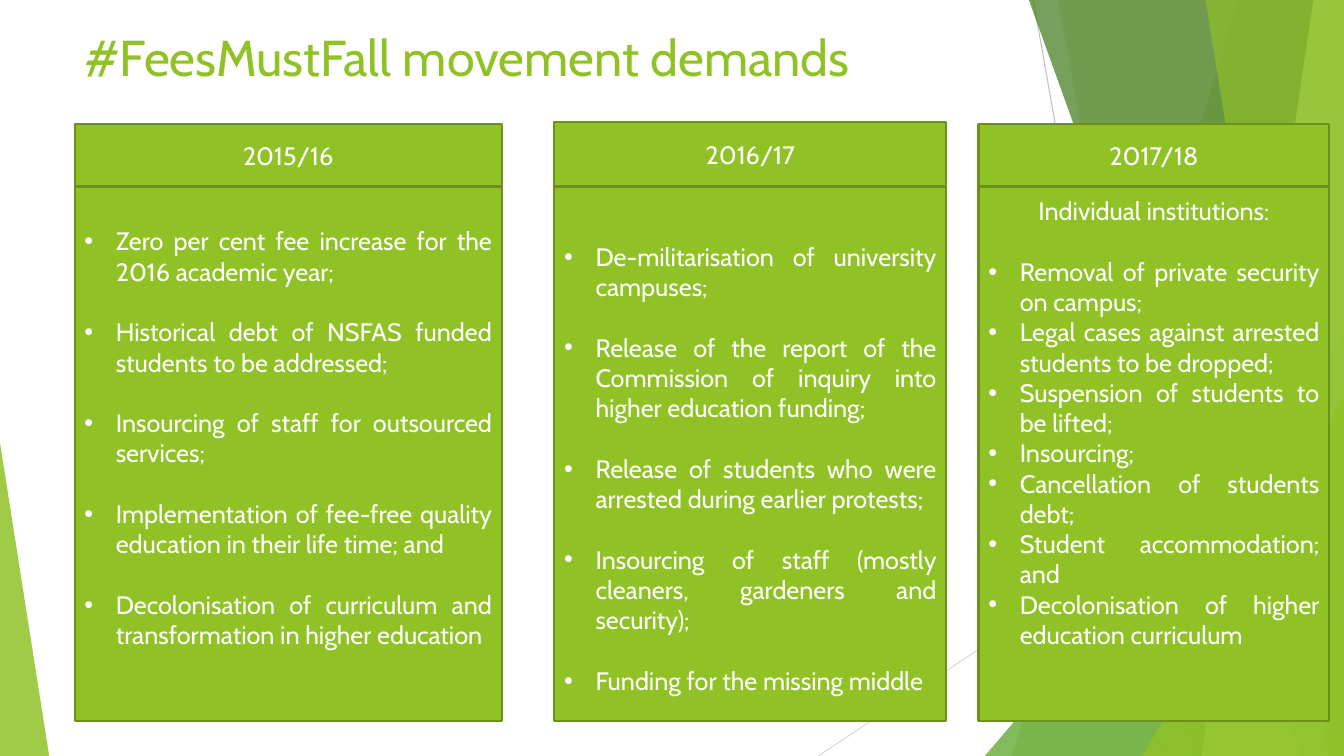
"""Build the slide that sets out the #FeesMustFall movement demands by year."""
from dataclasses import dataclass

from lxml.etree import SubElement
from pptx import Presentation
from pptx.dml.color import RGBColor
from pptx.enum.shapes import MSO_CONNECTOR, MSO_SHAPE
from pptx.enum.text import MSO_ANCHOR, PP_ALIGN
from pptx.oxml.ns import qn
from pptx.util import Cm, Pt

WIDTH, HEIGHT = 33.87, 19.05
BODY_TOP, BODY_HEIGHT = 4.7, 13.46
SIDE_INSET = 0.25
BULLET_INDENT = 0.79


@dataclass(frozen=True)
class Theme:
    font: str = "Cabin"
    bullet_font: str = "Arial"
    green: str = "90C226"
    border: str = "6B901C"
    leaf: str = "54A021"
    forest: str = "3F7819"
    lime: str = "C0E474"
    white: str = "FFFFFF"
    steep_line: str = "BFBFBF"
    shallow_line: str = "D9D9D9"
    title_size: float = 36
    body_size: float = 18
    blank_line: float = 21.7


THEME = Theme()


@dataclass(frozen=True)
class Ray:
    start: tuple[float, float]
    end: tuple[float, float]
    color: str


@dataclass(frozen=True)
class Shard:
    top_x: float
    foot_x: float
    color: str
    opacity: int


@dataclass(frozen=True)
class Wedge:
    left: float
    top: float
    width: float
    apex: float
    color: str
    opacity: int


@dataclass(frozen=True)
class Column:
    year: str
    left: float
    width: float
    header_top: float
    text_inset: float
    demands: tuple[str, ...]
    intro: str = ""
    spaced: bool = True


RAYS = (
    Ray((26.04, 0), (29.41, HEIGHT), THEME.steep_line),
    Ray((WIDTH, 10.24), (20.62, HEIGHT), THEME.shallow_line),
)

FACETS = (
    Shard(31.19, 25.5, THEME.green, 30),
    Shard(26.67, 30.05, THEME.green, 20),
    Wedge(24.82, 8.46, 9.05, 1, THEME.leaf, 72),
    Shard(25.93, 32.79, THEME.forest, 70),
    Shard(33.1, 30.28, THEME.lime, 70),
    Shard(30.38, 33.48, THEME.green, 65),
    Wedge(28.8, 9.98, 5.07, 1, THEME.green, 80),
    Wedge(0, 11.15, 1.24, 0, THEME.green, 85),
)

COLUMNS = (
    Column("2015/16", 1.88, 10.77, 3.12, 0.99, (
        "Zero per cent fee increase for the 2016 academic year;",
        "Historical debt of NSFAS funded students to be addressed;",
        "Insourcing of staff for outsourced services;",
        "Implementation of fee-free quality education in their life time; and",
        "Decolonisation of curriculum and transformation in higher education",
    )),
    Column("2016/17", 13.97, 9.88, 3.07, 1.38, (
        "De-militarisation of university campuses;",
        "Release of the report of the Commission of inquiry into higher education funding;",
        "Release of students who were arrested during earlier protests;",
        "Insourcing of staff (mostly cleaners, gardeners and security);",
        "Funding for the missing middle",
    )),
    Column("2017/18", 24.66, 8.84, 3.12, 0.23, (
        "Removal of private security on campus;",
        "Legal cases against arrested students to be dropped;",
        "Suspension of students to be lifted;",
        "Insourcing;",
        "Cancellation of students debt;",
        "Student accommodation; and",
        "Decolonisation of higher education curriculum",
    ), intro="Individual institutions:", spaced=False),
)


def draw_ray(page, ray: Ray) -> None:
    """Draw one thin background line."""
    line = page.shapes.add_connector(
        MSO_CONNECTOR.STRAIGHT, *(Cm(value) for value in ray.start + ray.end))
    line.line.color.rgb = RGBColor.from_string(ray.color)
    line.line.width = Pt(0.75)
    SubElement(line._element.spPr, qn("a:effectLst"))


def draw_facet(page, facet: Shard | Wedge) -> None:
    """Draw one translucent background facet."""
    if isinstance(facet, Shard):
        outline = page.shapes.build_freeform(Cm(facet.top_x), 0)
        corners = ((WIDTH, 0), (WIDTH, HEIGHT), (facet.foot_x, HEIGHT))
        outline.add_line_segments([(Cm(x), Cm(y)) for x, y in corners], close=True)
        shape = outline.convert_to_shape()
    else:
        shape = page.shapes.add_shape(
            MSO_SHAPE.ISOSCELES_TRIANGLE, Cm(facet.left), Cm(facet.top),
            Cm(facet.width), Cm(HEIGHT - facet.top))
        shape.adjustments[0] = facet.apex
    shape.shadow.inherit = False
    shape.line.fill.background()
    shape.fill.solid()
    shape.fill.fore_color.rgb = RGBColor.from_string(facet.color)
    color = next(shape._element.spPr.iter(qn("a:srgbClr")))
    SubElement(color, qn("a:alpha"), val=str(facet.opacity * 1000))


def style_para(para, size: float, color: str, align: PP_ALIGN) -> None:
    """Set alignment and font for a paragraph."""
    para.alignment = align
    for span in para.runs:
        span.font.name = THEME.font
        span.font.size = Pt(size)
        span.font.color.rgb = RGBColor.from_string(color)


def add_bullet(para) -> None:
    """Give a paragraph a hanging round bullet."""
    properties = para._p.get_or_add_pPr()
    properties.set("marL", str(Cm(BULLET_INDENT)))
    properties.set("indent", str(-Cm(BULLET_INDENT)))
    SubElement(properties, qn("a:buFont"), typeface=THEME.bullet_font)
    SubElement(properties, qn("a:buChar"), char="•")


def add_panel(page, column: Column, top: float, height: float):
    """Add a bordered green rectangle and return its text frame."""
    box = page.shapes.add_shape(
        MSO_SHAPE.RECTANGLE, Cm(column.left), Cm(top), Cm(column.width), Cm(height))
    box.shadow.inherit = False
    box.fill.solid()
    box.fill.fore_color.rgb = RGBColor.from_string(THEME.green)
    box.line.color.rgb = RGBColor.from_string(THEME.border)
    box.line.width = Pt(1.5)
    frame = box.text_frame
    frame.word_wrap = True
    frame.margin_left = frame.margin_right = Cm(SIDE_INSET)
    return frame


def draw_column(page, column: Column) -> None:
    """Draw one year's demands and its header."""
    body = add_panel(page, column, BODY_TOP, BODY_HEIGHT)
    body.vertical_anchor = MSO_ANCHOR.TOP
    body.margin_top = Cm(column.text_inset)
    lines = ((column.intro,) if column.intro else ()) + column.demands
    body.text = "\n".join(lines)
    for para in body.paragraphs:
        is_intro = para.text == column.intro
        style_para(para, THEME.body_size, THEME.white,
                   PP_ALIGN.CENTER if is_intro else PP_ALIGN.JUSTIFY)
        para.space_after = Pt(THEME.blank_line if column.spaced or is_intro else 0)
        if not is_intro:
            add_bullet(para)
    header = add_panel(page, column, column.header_top, BODY_TOP - column.header_top)
    header.vertical_anchor = MSO_ANCHOR.MIDDLE
    header.text = column.year
    style_para(header.paragraphs[0], THEME.body_size, THEME.white, PP_ALIGN.CENTER)


def draw_title(page) -> None:
    """Draw the slide title."""
    box = page.shapes.add_textbox(Cm(1.88), Cm(0.53), Cm(31.65), Cm(2.08))
    frame = box.text_frame
    frame.word_wrap = True
    frame.text = "#FeesMustFall movement demands"
    style_para(frame.paragraphs[0], THEME.title_size, THEME.green, PP_ALIGN.LEFT)


def main() -> None:
    """Build and save the deck."""
    deck = Presentation()
    deck.slide_width, deck.slide_height = Cm(WIDTH), Cm(HEIGHT)
    page = deck.slides.add_slide(deck.slide_layouts[6])
    for ray in RAYS:
        draw_ray(page, ray)
    for facet in FACETS:
        draw_facet(page, facet)
    draw_title(page)
    for column in COLUMNS:
        draw_column(page, column)
    deck.save("out.pptx")


if __name__ == "__main__":
    main()
